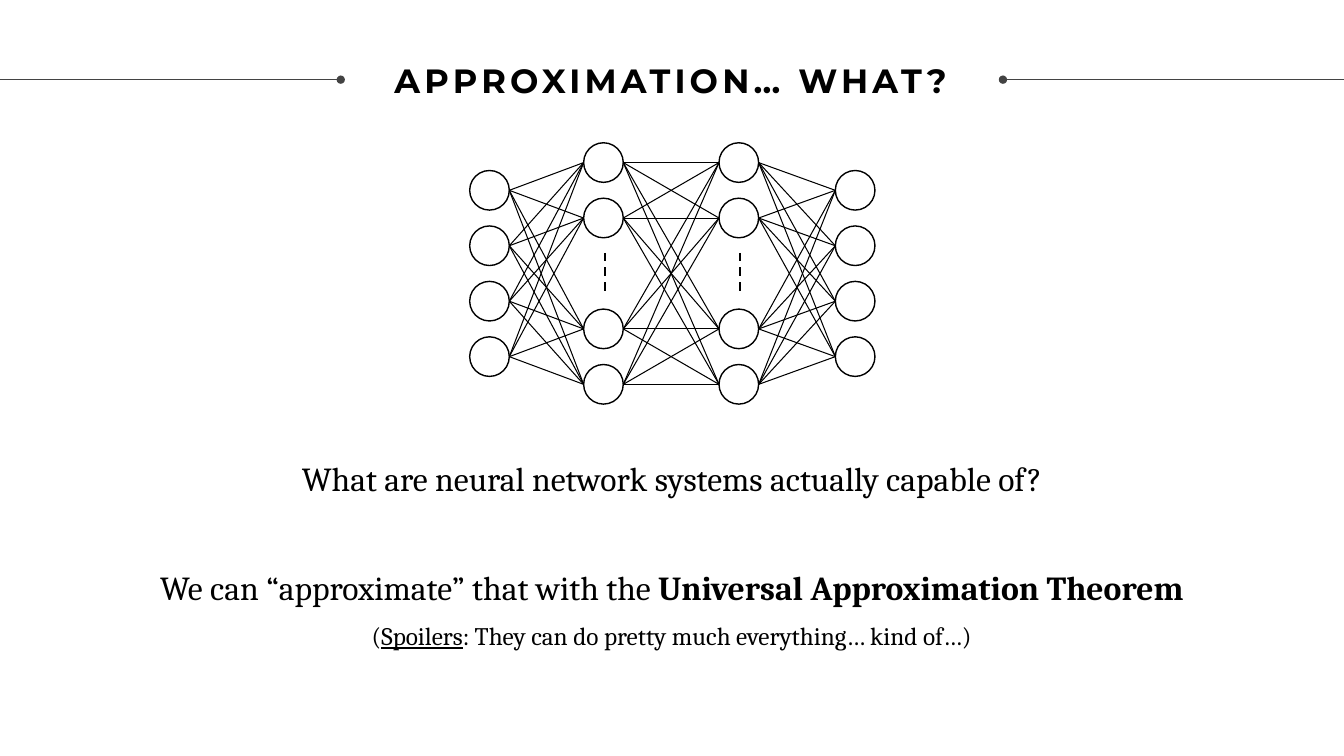
"""Build the slide that introduces the Universal Approximation Theorem."""
import dataclasses
import itertools

import lxml.etree
import pptx
import pptx.dml.color
import pptx.enum.dml
import pptx.enum.shapes
import pptx.enum.text
import pptx.oxml.ns
import pptx.util


@dataclasses.dataclass(frozen=True)
class Theme:
    ink: str = "000000"
    rule: str = "434343"
    title_font: str = "Montserrat"
    body_font: str = "Cambria"
    large: int = 24
    small: int = 18
    tracking: int = 3
    thin: float = 0.75
    outline: float = 1
    heavy: float = 1.5
    inset: float = 0.1


class SlideBuilder:
    COLUMNS, ROWS = 96, 54

    def __init__(self, presentation, theme):
        self.theme = theme
        self.cell_width = presentation.slide_width / self.COLUMNS
        self.cell_height = presentation.slide_height / self.ROWS
        self.slide = presentation.slides.add_slide(presentation.slide_layouts[6])
        self.shapes = self.slide.shapes

    def place(self, column, row):
        return round(column * self.cell_width), round(row * self.cell_height)

    def start_group(self):
        self.shapes = self.slide.shapes.add_group_shape().shapes

    def style_line(self, line, color, width):
        line.color.rgb = pptx.dml.color.RGBColor.from_string(color)
        line.width = pptx.util.Pt(width)

    def connector(self, start, end, color, width, dashed=False, dot=False):
        connector = self.shapes.add_connector(
            pptx.enum.shapes.MSO_CONNECTOR.STRAIGHT, *self.place(*start), *self.place(*end))
        self.style_line(connector.line, color, width)
        if dashed:
            connector.line.dash_style = pptx.enum.dml.MSO_LINE.DASH
        properties = connector._element.spPr
        if dot:
            outline = properties.find(pptx.oxml.ns.qn("a:ln"))
            lxml.etree.SubElement(outline, pptx.oxml.ns.qn("a:headEnd"), type="oval")
        lxml.etree.SubElement(properties, pptx.oxml.ns.qn("a:effectLst"))

    def circle(self, left, top, diameter):
        shape = self.shapes.add_shape(
            pptx.enum.shapes.MSO_SHAPE.OVAL,
            *self.place(left, top), *self.place(diameter, diameter))
        shape.shadow.inherit = False
        shape.fill.background()
        self.style_line(shape.line, self.theme.ink, self.theme.outline)

    def text_box(self, left, top, width, height, anchor):
        box = self.shapes.add_textbox(*self.place(left, top), *self.place(width, height))
        frame = box.text_frame
        frame.word_wrap = True
        frame.vertical_anchor = anchor
        inset = pptx.util.Inches(self.theme.inset)
        frame.margin_left = frame.margin_right = inset
        frame.margin_top = frame.margin_bottom = inset
        return frame

    def paragraph(self, paragraph, runs, font, size):
        paragraph.alignment = pptx.enum.text.PP_ALIGN.CENTER
        paragraph.font.name = font
        paragraph.font.size = pptx.util.Pt(size)
        paragraph.font.color.rgb = pptx.dml.color.RGBColor.from_string(self.theme.ink)
        for text, emphasis in runs:
            run = paragraph.add_run()
            run.text = text
            if emphasis == "bold":
                run.font.bold = True
            elif emphasis == "underline":
                run.font.underline = True

    def title(self, text, left, top, width, height):
        frame = self.text_box(left, top, width, height, pptx.enum.text.MSO_ANCHOR.MIDDLE)
        paragraph = frame.paragraphs[0]
        self.paragraph(paragraph, [(text, "bold")], self.theme.title_font, self.theme.large)
        properties = paragraph.runs[0]._r.get_or_add_rPr()
        properties.set("spc", str(self.theme.tracking * 100))

    def body(self, entries, left, top, width, height):
        frame = self.text_box(left, top, width, height, pptx.enum.text.MSO_ANCHOR.TOP)
        for index, (runs, size, space_before) in enumerate(entries):
            paragraph = frame.add_paragraph() if index else frame.paragraphs[0]
            paragraph.line_spacing = 1.15
            paragraph.space_before = pptx.util.Pt(space_before)
            self.paragraph(paragraph, runs, self.theme.body_font, size)

    def network(self, layers, top, pitch, diameter):
        self.start_group()
        radius = diameter / 2
        for left, slots in layers:
            for slot in slots:
                self.circle(left, top + slot * pitch, diameter)
            if 2 not in slots and 0 in slots:
                center = left + radius + 0.08
                middle = top + 2 * pitch + radius
                self.connector((center, middle - 1.48), (center, middle + 1.48),
                               self.theme.ink, self.theme.heavy, dashed=True)
        for (left, sources), (right, targets) in itertools.pairwise(layers):
            for source, target in itertools.product(sources, targets):
                self.connector((left + diameter, top + source * pitch + radius),
                               (right, top + target * pitch + radius),
                               self.theme.ink, self.theme.thin)
        self.shapes = self.slide.shapes


def main():
    presentation = pptx.Presentation()
    presentation.slide_width = pptx.util.Inches(13.33)
    presentation.slide_height = pptx.util.Inches(7.5)
    theme = Theme()
    builder = SlideBuilder(presentation, theme)

    for dot_column, edge_column in ((24.34, 0), (71.64, builder.COLUMNS)):
        builder.connector((dot_column, 5.69), (edge_column, 5.69),
                          theme.rule, theme.thin, dot=True)
    builder.title("APPROXIMATION… WHAT?", 27.14, 1.22, 41.54, 9)
    builder.body([
        ([("What are neural network systems actually capable of?", "")], theme.large, 0),
        ([("We can “approximate” that with the ", ""),
          ("Universal Approximation Theorem", "bold")], theme.large, 45),
        ([("(", ""), ("Spoilers", "underline"),
          (": They can do pretty much everything… kind of…)", "")], theme.small, 6),
    ], 6.48, 31.54, 83.02, 12.31)

    outer_slots = (0.5, 1.5, 2.5, 3.5)
    hidden_slots = (0, 1, 3, 4)
    layers = [(33.55, outer_slots), (41.69, hidden_slots),
              (51.36, hidden_slots), (59.67, outer_slots)]
    builder.network(layers, top=10.2, pitch=3.96, diameter=2.83)

    presentation.save("out.pptx")


if __name__ == "__main__":
    main()
